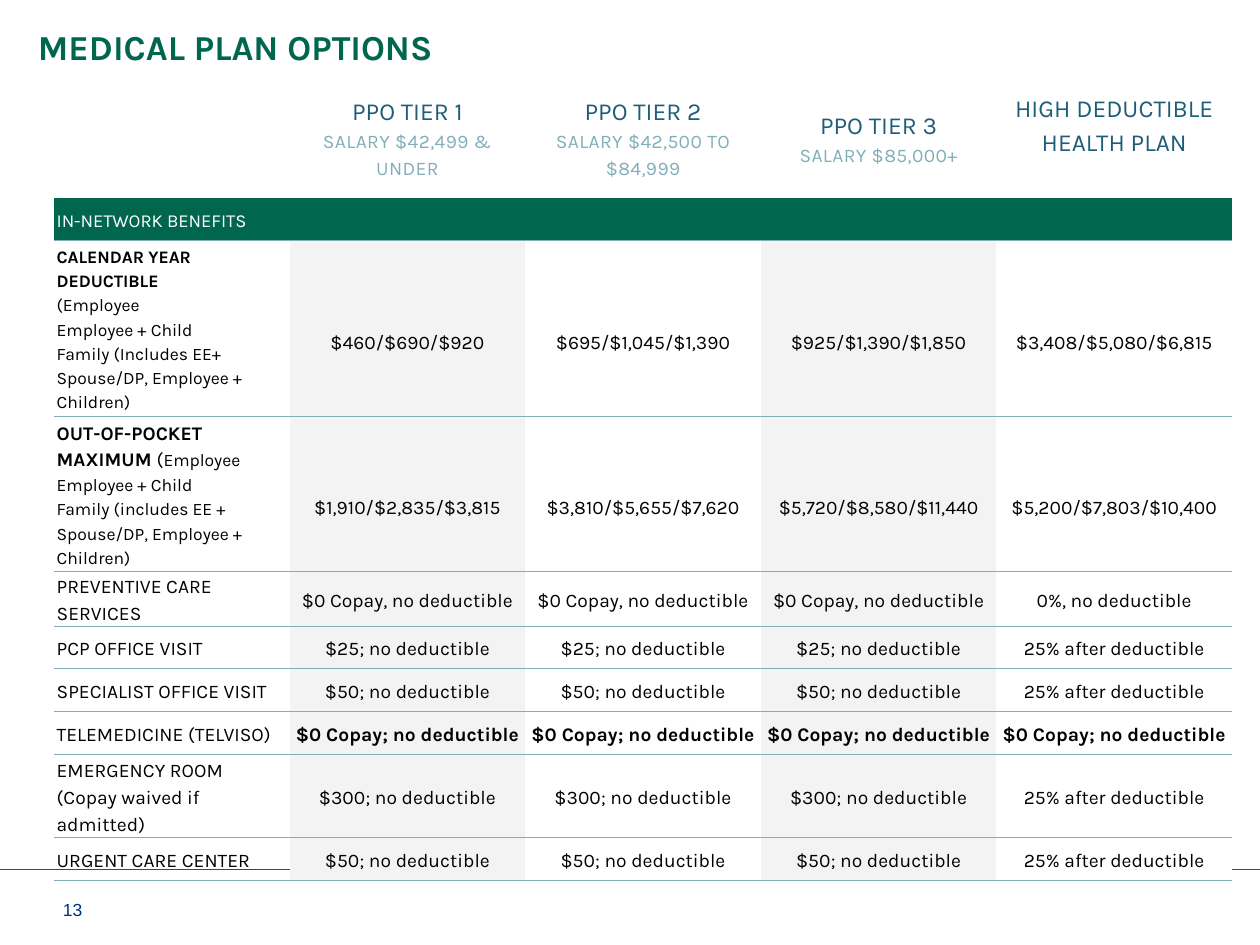
from dataclasses import dataclass

from lxml import etree
from pptx import Presentation
from pptx import util as u
from pptx.dml.color import RGBColor
from pptx.enum import shapes, text
from pptx.oxml.ns import qn

GREEN = RGBColor(0x00, 0x66, 0x4D)
NAVY = RGBColor(0x00, 0x30, 0x87)
BLUE = RGBColor(0x1E, 0x5D, 0x77)
TEAL = RGBColor(0x81, 0xAF, 0xB9)
GREY = RGBColor(0xF3, 0xF3, 0xF3)
WHITE = RGBColor(0xFF, 0xFF, 0xFF)
BLACK = RGBColor(0x00, 0x00, 0x00)

W, H = u.Inches(10), u.Inches(7.5)
COL, ROW = W * 0.187, H / 22
COLUMNS = 5
CENTER, LEFT = text.PP_ALIGN.CENTER, text.PP_ALIGN.LEFT
FONT = "Karla"


@dataclass(frozen=True)
class Run:
    text: str
    size: float = 11
    color: RGBColor = BLACK
    bold: bool = False
    spacing: int = 0
    font: str = FONT


@dataclass(frozen=True)
class Benefit:
    label: list[list[Run]]
    values: list[str]
    rows: float = 1
    bold: bool = False
    drop: float = 0


def plain(label: str) -> list[list[Run]]:
    return [[Run(label)]]


def small(*lines: str) -> list[list[Run]]:
    return [[Run(line, 10)] for line in lines]


def tiers(value: str, high_deductible: str) -> list[str]:
    return [value] * 3 + [high_deductible]


AFTER = "25% after deductible"
PLANS = [
    ("PPO TIER 1", "SALARY $42,499 & UNDER"),
    ("PPO TIER 2", "SALARY $42,500 TO $84,999"),
    ("PPO TIER 3", "SALARY $85,000+"),
    ("HIGH DEDUCTIBLE HEALTH PLAN", ""),
]
BENEFITS = [
    Benefit([[Run("CALENDAR YEAR DEDUCTIBLE", 10, bold=True)]]
            + small("(Employee", "Employee + Child",
                    "Family (Includes EE+ Spouse/DP, Employee + Children)"),
            ["$460/$690/$920", "$695/$1,045/$1,390", "$925/$1,390/$1,850",
             "$3,408/$5,080/$6,815"], 3.97, drop=0.6),
    Benefit([[Run("OUT-OF-POCKET MAXIMUM ", bold=True), Run("("), Run("Employee", 10)]]
            + small("Employee + Child",
                    "Family (includes EE + Spouse/DP, Employee + Children)"),
            ["$1,910/$2,835/$3,815", "$3,810/$5,655/$7,620", "$5,720/$8,580/$11,440",
             "$5,200/$7,803/$10,400"], 3.49, drop=0.6),
    Benefit(plain("PREVENTIVE CARE SERVICES"),
            tiers("$0 Copay, no deductible", "0%, no deductible"), 1.28),
    Benefit(plain("PCP OFFICE VISIT"), tiers("$25; no deductible", AFTER)),
    Benefit(plain("SPECIALIST OFFICE VISIT"), tiers("$50; no deductible", AFTER)),
    Benefit(plain("TELEMEDICINE (TELVISO)"), ["$0 Copay; no deductible"] * 4, bold=True),
    Benefit(plain("EMERGENCY ROOM (Copay waived if admitted)"),
            tiers("$300; no deductible", AFTER), 1.86),
    Benefit(plain("URGENT CARE CENTER"), tiers("$50; no deductible", AFTER)),
]


def style(font, run: Run) -> None:
    font.name, font.size, font.bold = run.font, u.Pt(run.size), run.bold
    font.color.rgb = run.color


def write(tf, paragraphs: list[list[Run]], align=LEFT, leading: float = 1.0) -> None:
    for i, runs in enumerate(paragraphs):
        p = tf.paragraphs[0] if i == 0 else tf.add_paragraph()
        p.alignment, p.line_spacing = align, leading
        if len(runs) == 1:
            style(p.font, runs[0])
        for run in runs:
            r = p.add_run()
            r.text = run.text
            if len(runs) > 1:
                style(r.font, run)
            if run.spacing:
                r._r.get_or_add_rPr().set("spc", str(run.spacing))


def add_label(slide, x: float, y: float, w: float, h: float, run: Run, anchor) -> None:
    sp = slide.shapes.add_textbox(int(W * x), int(H * y), int(W * w), int(H * h))
    tf = sp.text_frame
    tf.word_wrap, tf.vertical_anchor = True, anchor
    tf.margin_left = tf.margin_right = 0
    write(tf, [[run]])


def set_borders(cell, ruled: bool) -> None:
    tc_pr = cell._tc.get_or_add_tcPr()
    for i, side in enumerate(("lnL", "lnR", "lnT", "lnB")):
        ln = etree.Element(qn(f"a:{side}"), w=str(u.Pt(0.5)))
        if ruled and side in ("lnT", "lnB"):
            fill = etree.SubElement(ln, qn("a:solidFill"))
            etree.SubElement(fill, qn("a:srgbClr"), val=str(TEAL))
        else:
            etree.SubElement(ln, qn("a:noFill"))
        tc_pr.insert(i, ln)


def fill_cell(cell, paragraphs: list[list[Run]], fill=None, align=LEFT,
              ruled: bool = False, top: float = 0, bottom: float = 0) -> None:
    cell.vertical_anchor = text.MSO_ANCHOR.MIDDLE
    cell.margin_left = cell.margin_right = u.Inches(0.02)
    cell.margin_top, cell.margin_bottom = int(ROW * top), int(ROW * bottom)
    if fill is None:
        cell.fill.background()
    else:
        cell.fill.solid()
        cell.fill.fore_color.rgb = fill
    set_borders(cell, ruled)
    write(cell.text_frame, paragraphs, align, 1.19)


def add_benefits_table(slide) -> None:
    heights = [2.85, 1] + [b.rows for b in BENEFITS]
    table = slide.shapes.add_table(
        len(heights), COLUMNS, int(W * 0.043), int(H * 0.08),
        int(COL * COLUMNS), int(ROW * sum(heights))).table
    table.first_row = table.horz_banding = False
    for column in table.columns:
        column.width = int(COL)
    for row, height in zip(table.rows, heights):
        row.height = int(ROW * height)

    fill_cell(table.cell(0, 0), [])
    for c, (plan, salary) in enumerate(PLANS, 1):
        heading = [[Run(plan, 14, BLUE)]]
        if salary:
            heading.append([Run(salary, 11, TEAL, spacing=20)])
        fill_cell(table.cell(0, c), heading, align=CENTER, bottom=0 if salary else 0.6)

    for c in range(COLUMNS):
        band = [[Run("IN-NETWORK BENEFITS", 10.5, WHITE)]] if c == 0 else []
        fill_cell(table.cell(1, c), band, GREEN)

    for r, benefit in enumerate(BENEFITS, 2):
        fill_cell(table.cell(r, 0), benefit.label, ruled=True)
        for c, value in enumerate(benefit.values, 1):
            fill_cell(table.cell(r, c), [[Run(value, bold=benefit.bold)]],
                      GREY if c % 2 else WHITE, CENTER, True, benefit.drop)


def add_footer_line(slide) -> None:
    y = int(H * 0.92)
    line = slide.shapes.add_connector(shapes.MSO_CONNECTOR.STRAIGHT, 0, y, W, y)
    line.line.color.rgb, line.line.width = GREEN, u.Pt(0.5)
    etree.SubElement(line._element.spPr, qn("a:effectLst"))


def main() -> None:
    prs = Presentation()
    prs.slide_width, prs.slide_height = W, H
    slide = prs.slides.add_slide(prs.slide_layouts[6])
    add_footer_line(slide)
    add_label(slide, 0.05, 0.94, 0.05, 0.04, Run("13", 10, NAVY, font="Arial"),
              text.MSO_ANCHOR.BOTTOM)
    add_label(slide, 0.03, 0.02, 0.89, 0.14,
              Run("MEDICAL PLAN OPTIONS", 20, GREEN, True), text.MSO_ANCHOR.TOP)
    add_benefits_table(slide)
    prs.save("out.pptx")


if __name__ == "__main__":
    main()
